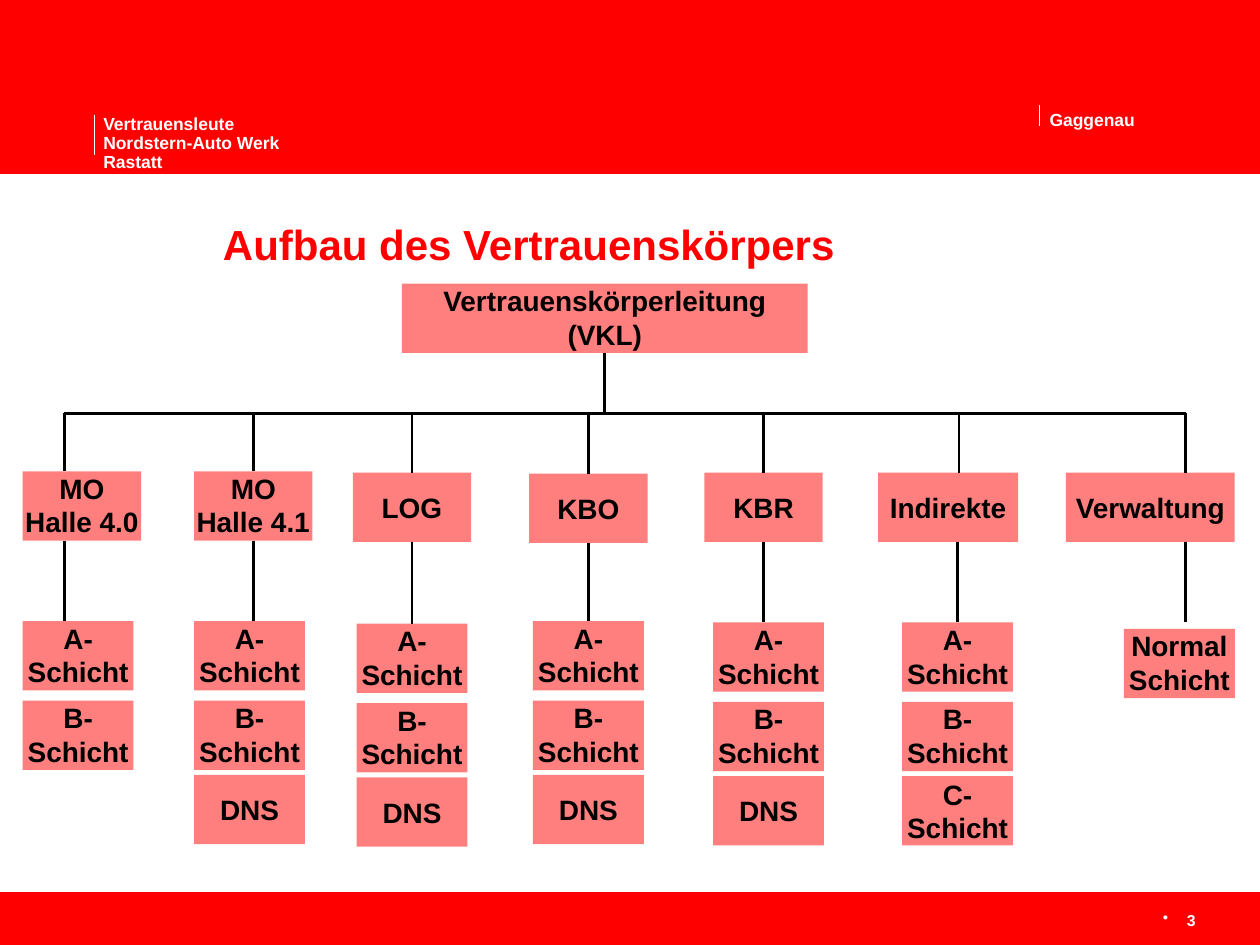
from pptx import Presentation
from pptx.dml.color import RGBColor
from pptx.enum.shapes import MSO_CONNECTOR, MSO_SHAPE
from pptx.enum.text import MSO_ANCHOR, PP_ALIGN
from pptx.oxml.ns import qn
from pptx.util import Inches, Pt
from lxml import etree

RED = RGBColor(0xFF, 0x00, 0x00)
WHITE = RGBColor(0xFF, 0xFF, 0xFF)
BLACK = RGBColor(0x00, 0x00, 0x00)
RECTANGLE = MSO_SHAPE.RECTANGLE
STRAIGHT = MSO_CONNECTOR.STRAIGHT
TOP, MIDDLE = MSO_ANCHOR.TOP, MSO_ANCHOR.MIDDLE
LEFT, CENTER, RIGHT = PP_ALIGN.LEFT, PP_ALIGN.CENTER, PP_ALIGN.RIGHT
TOP_SIDE, BOTTOM_SIDE = 0, 2

FONT = "Arial"
BOX_HEIGHT = 0.55
UNIT_WIDTH = 0.94
SHIFT_WIDTH = 0.88
SHIFT_OFFSETS = (0, 0.63, 1.22)
BUS_TOP = 3.28

# Unit: name, left, top, width, line above x, line below x, shifts left, shifts top, shifts
UNITS = [
    ("MO\nHalle 4.0", 0.18, 3.74, UNIT_WIDTH, 0.51, 0.51, 0.18, 4.93, ("A-Schicht", "B-Schicht")),
    ("MO\nHalle 4.1", 1.54, 3.74, UNIT_WIDTH, 2.01, 2.01, 1.54, 4.93, ("A-Schicht", "B-Schicht", "DNS")),
    ("LOG", 2.8, 3.75, UNIT_WIDTH, 3.27, 3.27, 2.83, 4.95, ("A-Schicht", "B-Schicht", "DNS")),
    ("KBO", 4.2, 3.76, UNIT_WIDTH, 4.67, 4.67, 4.23, 4.93, ("A-Schicht", "B-Schicht", "DNS")),
    ("KBR", 5.59, 3.75, UNIT_WIDTH, 6.06, 6.06, 5.66, 4.94, ("A-Schicht", "B-Schicht", "DNS")),
    ("Indirekte", 6.97, 3.75, 1.11, 7.61, 7.6, 7.16, 4.94, ("A-Schicht", "B-Schicht", "C-Schicht")),
    ("Verwaltung", 8.46, 3.75, 1.34, 9.41, 9.41, 8.92, 4.99, ("Normal\nSchicht",)),
]


class OrgChartPage:
    def __init__(self, page):
        self.page = page

    def fill_text(self, frame, text, size, color, align, spacing=None):
        frame.margin_left = frame.margin_right = 0
        frame.margin_top = frame.margin_bottom = 0
        frame.text = text
        for para in frame.paragraphs:
            para.alignment = align
            if spacing:
                para.line_spacing = Pt(spacing)
            for span in para.runs:
                span.font.name = FONT
                span.font.size = Pt(size)
                span.font.bold = True
                span.font.color.rgb = color

    def band(self, left, top, width, height):
        shape = self.page.shapes.add_shape(
            RECTANGLE, Inches(left), Inches(top), Inches(width), Inches(height))
        shape.shadow.inherit = False
        shape.fill.solid()
        shape.fill.fore_color.rgb = RED
        shape.line.fill.background()
        return shape

    def box(self, text, left, top, width, anchor):
        shape = self.band(left, top, width, BOX_HEIGHT)
        color = shape._element.spPr.find(qn("a:solidFill"))[0]
        etree.SubElement(color, qn("a:alpha"), val="50000")
        frame = shape.text_frame
        frame.word_wrap = True
        frame.vertical_anchor = anchor
        self.fill_text(frame, text, 16, BLACK, CENTER)
        return shape

    def label(self, text, left, top, width, height, size, color, spacing, align=LEFT, wrap=False):
        label = self.page.shapes.add_textbox(
            Inches(left), Inches(top), Inches(width), Inches(height))
        label.text_frame.word_wrap = wrap
        self.fill_text(label.text_frame, text, size, color, align, spacing)
        return label

    def line(self, start, end, color=BLACK, weight=1.5, above=None, below=None):
        """Draw a line, joined to the boxes whose side middles it meets."""
        line = self.page.shapes.add_connector(
            STRAIGHT, *(Inches(value) for value in (*start, *end)))
        line.line.color.rgb = color
        line.line.width = Pt(weight)
        etree.SubElement(line._element.spPr, qn("a:effectLst"))
        if above is not None and self.is_middle(above, start[0]):
            line.begin_connect(above, BOTTOM_SIDE)
        if below is not None and self.is_middle(below, end[0]):
            line.end_connect(below, TOP_SIDE)

    def is_middle(self, box, x):
        return abs(box.left + box.width / 2 - Inches(x)) < Inches(0.02)


def main():
    deck = Presentation()
    deck.slide_width, deck.slide_height = Inches(10), Inches(7.5)
    chart = OrgChartPage(deck.slides.add_slide(deck.slide_layouts[6]))

    # Header and footer bands
    chart.band(0, 7.08, 10, 0.42)
    chart.band(0, 0, 10, 1.38)
    chart.label("Gaggenau", 8.33, 0.88, 0.68, 0.15, 10, WHITE, 11)
    chart.line((8.25, 0.83), (8.25, 1), WHITE, 0.75)
    chart.label("Vertrauensleute\nNordstern-Auto Werk Rastatt",
                0.82, 0.91, 1.9, 0.31, 10, WHITE, 11)
    chart.line((0.75, 0.91), (0.75, 1.23), WHITE, 0.8)

    # Title
    chart.label("Aufbau des Vertrauenskörpers", 1.77, 1.77, 7.93, 0.36, 24, RED, 26, wrap=True)

    # Page number with its bullet
    number = chart.label("3", 9.23, 7.21, 0.26, 0.17, 9, WHITE, 12, RIGHT)
    properties = number.text_frame.paragraphs[0]._p.get_or_add_pPr()
    properties.set("marL", str(Inches(0.19)))
    properties.set("indent", str(-Inches(0.19)))
    etree.SubElement(properties, qn("a:buChar"), char="•")

    # Leadership and the bus below it
    leadership = chart.box("Vertrauenskörperleitung\n(VKL)", 3.19, 2.25, 3.22, TOP)
    chart.line((4.8, 2.8), (4.8, BUS_TOP), above=leadership)
    chart.line((UNITS[0][4], BUS_TOP), (UNITS[-1][4], BUS_TOP))

    # Units with their shifts
    for name, left, top, width, upper_x, lower_x, shift_left, shift_top, shifts in UNITS:
        unit = chart.box(name, left, top, width, TOP if "\n" in name else MIDDLE)
        shift_boxes = [
            chart.box(shift, shift_left, shift_top + offset, SHIFT_WIDTH,
                      MIDDLE if offset == SHIFT_OFFSETS[-1] else TOP)
            for shift, offset in zip(shifts, SHIFT_OFFSETS)
        ]
        chart.line((upper_x, BUS_TOP), (upper_x, top), below=unit)
        chart.line((lower_x, top + BOX_HEIGHT), (lower_x, min(shift_top, 4.94)),
                   above=unit, below=shift_boxes[0])

    deck.save("out.pptx")


if __name__ == "__main__":
    main()
